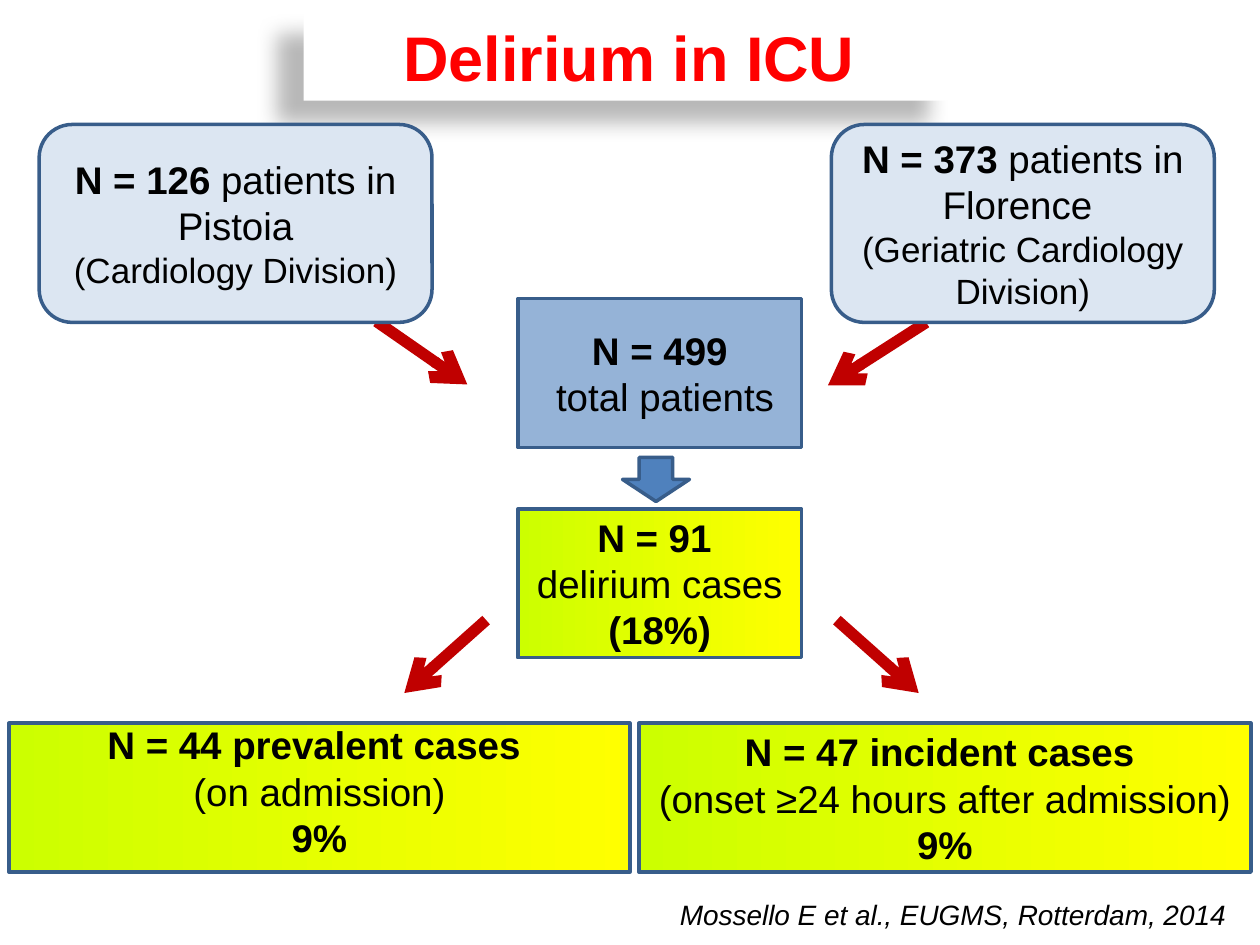
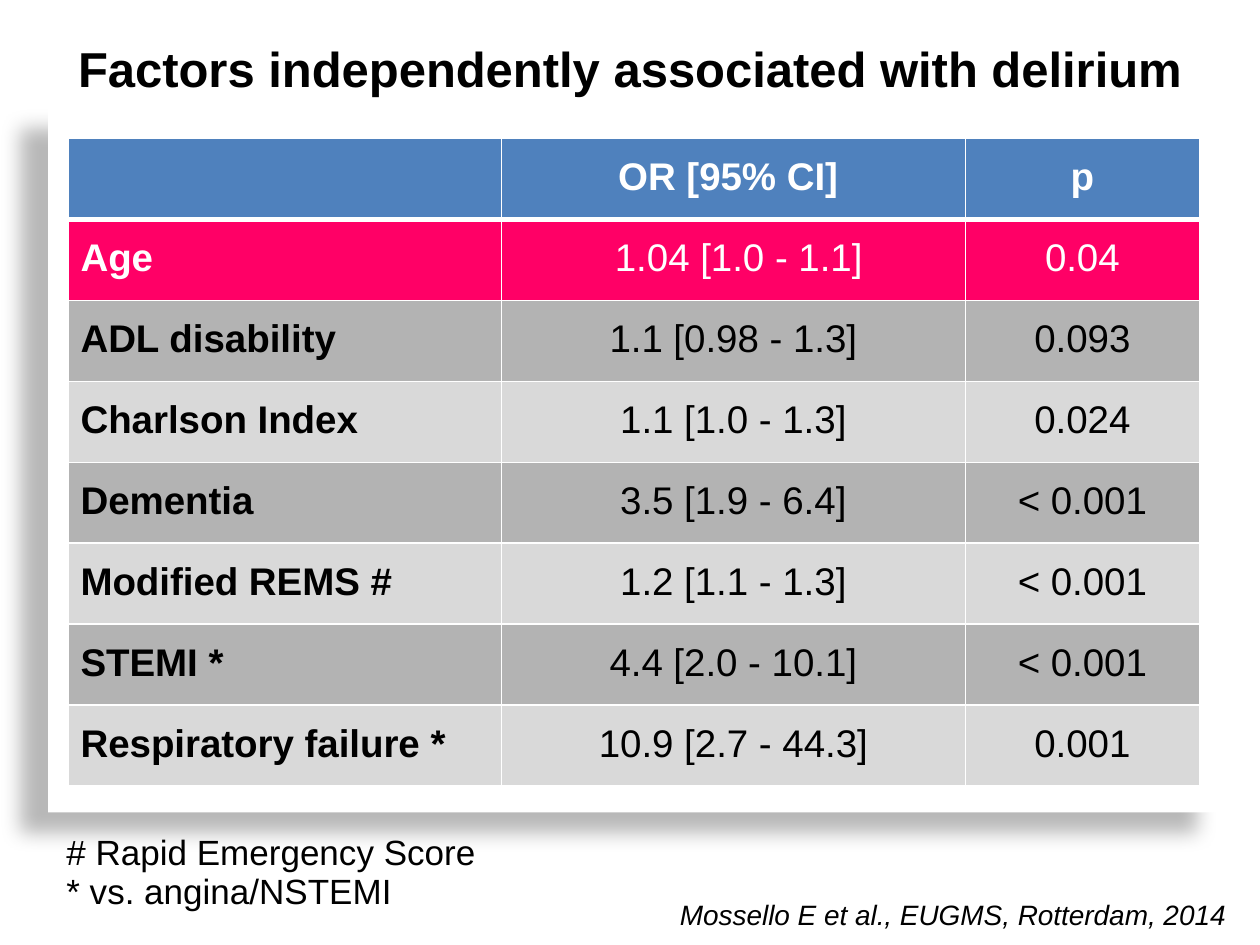
from dataclasses import dataclass

from lxml.etree import SubElement
from pptx import Presentation
from pptx.dml.color import RGBColor
from pptx.enum.shapes import MSO_CONNECTOR, MSO_SHAPE
from pptx.enum.text import MSO_ANCHOR, PP_ALIGN
from pptx.oxml.ns import qn
from pptx.util import Cm, Pt


@dataclass(frozen=True)
class Theme:
    """Colours, font and type sizes shared by the slides."""
    font: str = "Arial"
    black: str = "000000"
    white: str = "FFFFFF"
    title_red: str = "FF0000"
    arrow_red: str = "C00000"
    outline: str = "385D8A"
    blue: str = "4F81BD"
    mid_blue: str = "95B3D7"
    pale_blue: str = "DCE6F2"
    cases: tuple = ("CCFF00", "FFFF00")
    highlight: str = "FF0066"
    bands: tuple = ("B3B3B3", "D9D9D9")
    title: int = 36
    heading: int = 28
    body: int = 22
    note: int = 20
    citation: int = 16


@dataclass(frozen=True)
class Box:
    """A rectangle in centimetres."""
    left: float
    top: float
    width: float
    height: float

    def inside(self, left, top, width, height):
        """Return a box given relative to this one."""
        return Box(self.left + left, self.top + top, width, height)

    def lengths(self):
        """Return the four sides as lengths."""
        return [Cm(side) for side in (self.left, self.top, self.width, self.height)]


@dataclass(frozen=True)
class Words:
    """A piece of text with one format."""
    text: str
    bold: bool = False
    size: int = Theme.body
    color: str = Theme.black
    italic: bool = False


THEME = Theme()
PAGE = Box(0, 0, 25.4, 19.05)
CITATION = "Mossello E et al., EUGMS, Rotterdam, 2014"
FACTORS = [
    ("", "OR [95% CI] ", "p"),
    ("Age", " 1.04 [1.0 - 1.1]", "0.04"),
    ("ADL disability", "1.1 [0.98 - 1.3]", "0.093"),
    ("Charlson Index", "1.1 [1.0 - 1.3]", "0.024"),
    ("Dementia", "3.5 [1.9 - 6.4]", "< 0.001"),
    ("Modified REMS #", "1.2 [1.1 - 1.3]", "< 0.001"),
    ("STEMI *", "4.4 [2.0 - 10.1]", "< 0.001"),
    ("Respiratory failure *", "10.9 [2.7 - 44.3]", "0.001"),
]


def rgb(color):
    """Turn a hex string into a colour."""
    return RGBColor.from_string(color)


def write(frame, lines, align=PP_ALIGN.CENTER, spacing=None, after=None):
    """Write lines, each a list of words, into a text frame."""
    frame.word_wrap = True
    for index, line in enumerate(lines):
        paragraph = frame.add_paragraph() if index else frame.paragraphs[0]
        paragraph.alignment = align
        if spacing:
            paragraph.line_spacing = spacing
        if after:
            paragraph.space_after = Pt(after)
        for words in line:
            run = paragraph.add_run()
            run.text = words.text
            run.font.name = THEME.font
            run.font.size = Pt(words.size)
            run.font.bold = words.bold
            run.font.italic = words.italic
            run.font.color.rgb = rgb(words.color)


def add_text(slide, box, lines, align, spacing=None):
    """Add a plain text box."""
    text_box = slide.shapes.add_textbox(*box.lengths())
    write(text_box.text_frame, lines, align, spacing)


def add_block(slide, box, fill, lines=(), kind=MSO_SHAPE.RECTANGLE, outline=THEME.outline):
    """Add a filled shape with centred text; a pair of colours makes a gradient."""
    shape = slide.shapes.add_shape(kind, *box.lengths())
    shape.shadow.inherit = False
    if isinstance(fill, tuple):
        shape.fill.gradient()
        shape.fill.gradient_angle = 0
        for stop, color, position in zip(shape.fill.gradient_stops, fill, (0, 1)):
            stop.color.rgb = rgb(color)
            stop.position = position
    else:
        shape.fill.solid()
        shape.fill.fore_color.rgb = rgb(fill)
    if outline:
        shape.line.color.rgb = rgb(outline)
        shape.line.width = Pt(2)
    else:
        shape.line.fill.background()
    shape.text_frame.vertical_anchor = MSO_ANCHOR.MIDDLE
    write(shape.text_frame, lines)
    return shape


def add_panel(slide, box, lines=()):
    """Add a white panel that casts a soft shadow down and left."""
    panel = add_block(slide, box, THEME.white, lines, outline=None)
    effects = panel._element.spPr.find(qn("a:effectLst"))
    shadow = SubElement(effects, qn("a:outerShdw"), blurRad=str(Pt(11.8)),
                        dist=str(Pt(19.7)), dir=str(141 * 60000), algn="tl", rotWithShape="0")
    color = SubElement(shadow, qn("a:srgbClr"), val=THEME.black)
    SubElement(color, qn("a:alpha"), val="28000")


def add_arrow(slide, box, start, end):
    """Add a thick red arrow between two points of a box."""
    points = [Cm(value) for x, y in (start, end) for value in (box.left + x, box.top + y)]
    arrow = slide.shapes.add_connector(MSO_CONNECTOR.STRAIGHT, *points)
    arrow.line.color.rgb = rgb(THEME.arrow_red)
    arrow.line.width = Pt(6.52)
    properties = arrow._element.spPr
    SubElement(properties.find(qn("a:ln")), qn("a:tailEnd"), type="arrow")
    SubElement(properties, qn("a:effectLst"))


def add_citation(slide, box):
    """Add the source line at the bottom right of a page."""
    words = Words(CITATION, size=THEME.citation, italic=True)
    add_text(slide, box.inside(10.31, 18.03, 14.66, 0.86), [[words]], PP_ALIGN.RIGHT, 0.93)


def add_totals(slide, box):
    """Stack all patients above the delirium cases."""
    height = 3
    add_block(slide, box.inside(0, 0, box.width, height), THEME.mid_blue,
              [[Words("N = 499", True)], [Words(" total patients")]])
    add_block(slide, box.inside(0, box.height - height, box.width, height), THEME.cases,
              [[Words("N = 91 ", True)], [Words("delirium cases")], [Words("(18%)", True)]])
    add_block(slide, box.inside(2.11, 3.2, 1.35, 0.89), THEME.blue, kind=MSO_SHAPE.DOWN_ARROW)


def add_outcomes(slide, box):
    """Place prevalent and incident cases side by side."""
    gap, right_width = 0.18, 12.34
    left_width = box.width - gap - right_width
    prevalent = add_block(slide, box.inside(0, 0, left_width, box.height), THEME.cases,
                          [[Words("N = 44 prevalent cases ", True)],
                           [Words("(on admission)")], [Words("9%", True)]])
    prevalent.text_frame.margin_top = 0
    prevalent.text_frame.margin_bottom = Cm(0.28)
    add_block(slide, box.inside(left_width + gap, 0, right_width, box.height), THEME.cases,
              [[Words("N = 47 incident cases ", True)],
               [Words("(onset ≥24 hours after admission)")], [Words("9%", True)]])


def add_flow_arrows(slide, box):
    """Lead from the centres to the total and from the cases to the outcomes."""
    for start, end in (((7.59, 6.48), (9.42, 7.75)), ((18.67, 6.5), (16.69, 7.77)),
                       ((9.8, 12.5), (8.15, 13.97)), ((16.87, 12.5), (18.52, 13.97))):
        add_arrow(slide, box, start, end)


def add_centres(slide, box):
    """Place the two recruiting centres at the ends of a band."""
    left_width, right_width = 7.92, 7.72
    centres = (
        (0, left_width, "N = 126 ", "patients in Pistoia", "(Cardiology Division)"),
        (box.width - right_width, right_width, "N = 373", " patients in Florence ",
         "(Geriatric Cardiology Division)"),
    )
    for left, width, count, place, division in centres:
        add_block(slide, box.inside(left, 0, width, box.height), THEME.pale_blue,
                  [[Words(count, True), Words(place)], [Words(division, size=THEME.note)]],
                  MSO_SHAPE.ROUNDED_RECTANGLE)


def build_flow_slide(slide, page):
    """Build the patient flow slide."""
    add_panel(slide, page.inside(6.12, 0.23, 13.13, 1.8),
              [[Words("Delirium in ICU", True, THEME.title, THEME.title_red)]])
    add_totals(slide, page.inside(10.44, 6.02, 5.72, 7.24))
    add_outcomes(slide, page.inside(0.18, 14.58, 25.04, 3))
    add_flow_arrows(slide, page)
    add_citation(slide, page)
    add_centres(slide, page.inside(0.79, 2.51, 23.69, 3.99))


def set_borders(cell, top, bottom):
    """Draw white borders around a cell."""
    properties = cell._tc.get_or_add_tcPr()
    for side, width in (("L", 0.91), ("R", 0.91), ("T", top), ("B", bottom)):
        line = SubElement(properties, qn(f"a:ln{side}"), w=str(Pt(width)))
        fill = SubElement(line, qn("a:solidFill"))
        SubElement(fill, qn("a:srgbClr"), val=THEME.white)


def add_factor_table(slide, box):
    """Add the table of odds ratios."""
    thin, thick = 0.91, 2.95
    table = slide.shapes.add_table(len(FACTORS), len(FACTORS[0]), *box.lengths()).table
    table.horz_banding = False
    for column, width in zip(table.columns, (8.74, 9.35, 4.72)):
        column.width = Cm(width)
    for row_index, texts in enumerate(FACTORS):
        table.rows[row_index].height = Cm(box.height / len(FACTORS))
        special = (THEME.blue, THEME.highlight)
        fill = special[row_index] if row_index < 2 else THEME.bands[row_index % 2]
        color = THEME.white if row_index < 2 else THEME.black
        for column_index, text in enumerate(texts):
            cell = table.cell(row_index, column_index)
            set_borders(cell, thick if row_index == 1 else thin,
                        thick if row_index == 0 else thin)
            cell.fill.solid()
            cell.fill.fore_color.rgb = rgb(fill)
            cell.margin_top = Cm(0.53)
            if text:
                bold = row_index == 0 or column_index == 0
                align = PP_ALIGN.CENTER if column_index else PP_ALIGN.LEFT
                write(cell.text_frame, [[Words(text, bold, color=color)]], align, 0.76, 14.2)


def build_factor_slide(slide, page):
    """Build the slide of factors associated with delirium."""
    add_panel(slide, page.inside(0.97, 2.16, 23.7, 14.22))
    add_factor_table(slide, page.inside(1.37, 2.79, 22.81, 13.06))
    add_text(slide, page.inside(0, 0.66, page.width, 1.42),
             [[Words("Factors independently associated with delirium", True, THEME.heading)]],
             PP_ALIGN.CENTER)
    notes = ("# Rapid Emergency Score", "* vs. angina/NSTEMI")
    add_text(slide, page.inside(1.09, 16.69, 10.64, 1.83),
             [[Words(note, size=THEME.note)] for note in notes], PP_ALIGN.LEFT, 0.93)
    add_citation(slide, page)


def main():
    """Build and save the presentation."""
    presentation = Presentation()
    presentation.slide_width = Cm(PAGE.width)
    presentation.slide_height = Cm(PAGE.height)
    for build in (build_flow_slide, build_factor_slide):
        build(presentation.slides.add_slide(presentation.slide_layouts[6]), PAGE)
    presentation.save("out.pptx")


if __name__ == "__main__":
    main()
